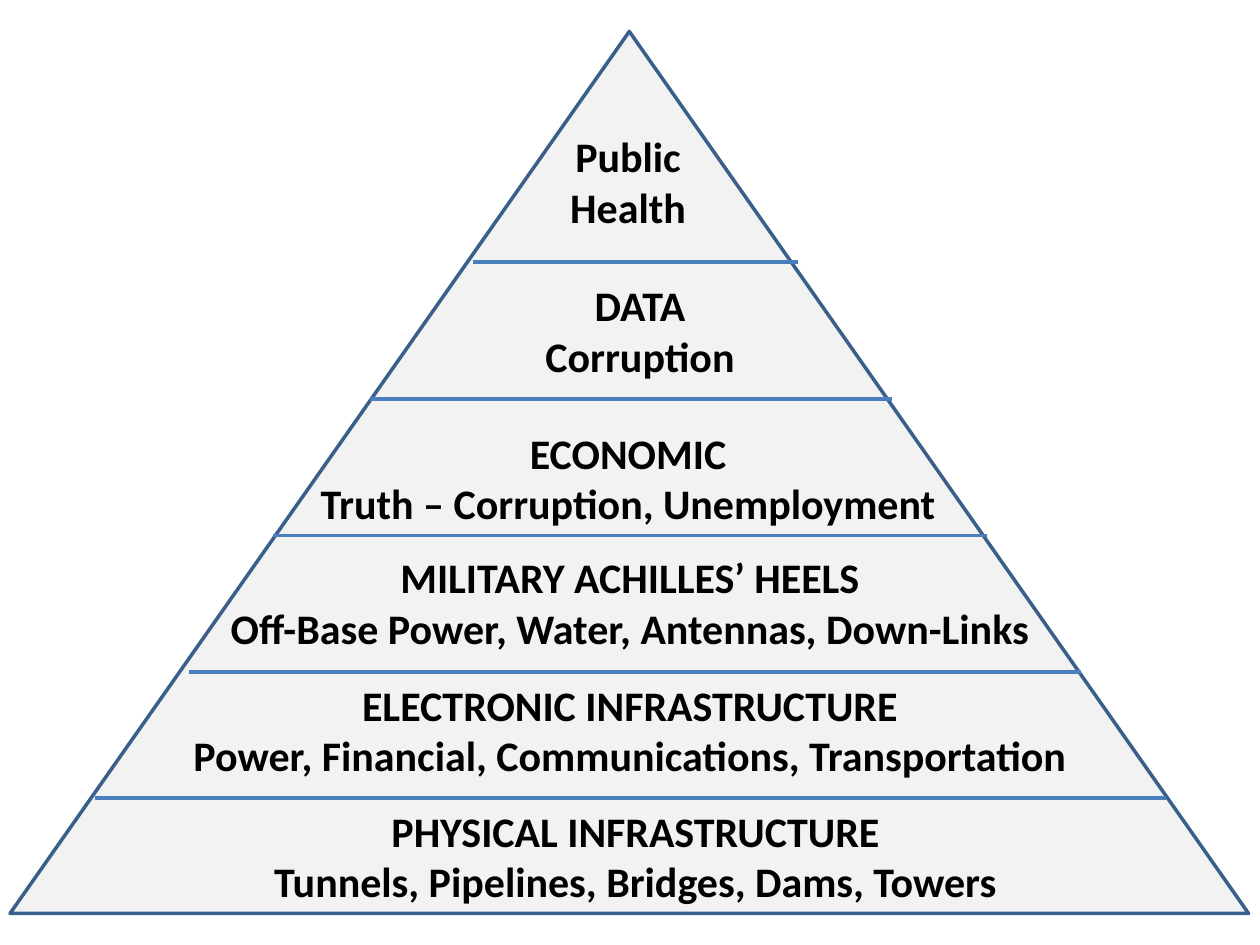
from lxml import etree
from pptx import Presentation
from pptx.dml.color import RGBColor
from pptx.enum.shapes import MSO_CONNECTOR, MSO_SHAPE
from pptx.enum.text import MSO_AUTO_SIZE, PP_ALIGN
from pptx.oxml.ns import qn
from pptx.util import Inches, Pt

FILL = RGBColor(0xF2, 0xF2, 0xF2)
OUTLINE = RGBColor(0x3A, 0x5F, 0x8C)
DIVIDER = RGBColor(0x4B, 0x7E, 0xBC)
BLACK = RGBColor(0, 0, 0)

PYRAMID_BOX = (0.08, 0.25, 9.83, 7)
LABEL_HEIGHT = 0.91

# Dividers (left, right, y) and labels (left, top, width, text, wrap),
# all relative to the pyramid's top left corner.
DIVIDERS = [
    (3.67, 6.25, 1.83),
    (2.86, 7.00, 2.92),
    (2.09, 7.75, 4.00),
    (1.42, 8.50, 5.08),
    (0.67, 9.17, 6.08),
]
LABELS = [
    (4.28, 0.74, 1.25, "Public\nHealth", True),
    (3.50, 1.92, 3.00, "DATA\nCorruption", True),
    (2.34, 3.09, 5.13, "ECONOMIC\nTruth – Corruption, Unemployment", False),
    (-0.08, 4.08, 10, "MILITARY ACHILLES’ HEELS\nOff-Base Power, Water, Antennas, Down-Links", True),
    (-0.08, 5.09, 10, "ELECTRONIC INFRASTRUCTURE\nPower, Financial, Communications, Transportation", True),
    (0.30, 6.09, 9.33, "PHYSICAL INFRASTRUCTURE\nTunnels, Pipelines, Bridges, Dams, Towers", True),
]


def add_divider(slide, x1, x2, y):
    line = slide.shapes.add_connector(
        MSO_CONNECTOR.STRAIGHT, Inches(x1), Inches(y), Inches(x2), Inches(y))
    line.line.color.rgb = DIVIDER
    line.line.width = Pt(2.25)
    etree.SubElement(line._element.spPr, qn("a:effectLst"))


def add_label(slide, left, top, width, text, wrap):
    sp = slide.shapes.add_textbox(
        Inches(left), Inches(top), Inches(width), Inches(LABEL_HEIGHT))
    tf = sp.text_frame
    tf.word_wrap = wrap
    tf.auto_size = MSO_AUTO_SIZE.SHAPE_TO_FIT_TEXT
    tf.text = text
    for p in tf.paragraphs:
        p.alignment = PP_ALIGN.CENTER
        for r in p.runs:
            r.font.name = "Calibri"
            r.font.size = Pt(24)
            r.font.bold = True
            r.font.color.rgb = BLACK


def add_pyramid(slide, left, top, width, height):
    sp = slide.shapes.add_shape(
        MSO_SHAPE.ISOSCELES_TRIANGLE,
        Inches(left), Inches(top), Inches(width), Inches(height))
    sp.shadow.inherit = False
    sp.fill.solid()
    sp.fill.fore_color.rgb = FILL
    sp.line.color.rgb = OUTLINE
    sp.line.width = Pt(2)
    for x1, x2, y in DIVIDERS:
        add_divider(slide, left + x1, left + x2, top + y)
    for x, y, label_width, text, wrap in LABELS:
        add_label(slide, left + x, top + y, label_width, text, wrap)


def main():
    prs = Presentation()
    prs.slide_width = Inches(10)
    prs.slide_height = Inches(7.5)
    slide = prs.slides.add_slide(prs.slide_layouts[6])
    add_pyramid(slide, *PYRAMID_BOX)
    prs.save("out.pptx")


if __name__ == "__main__":
    main()
